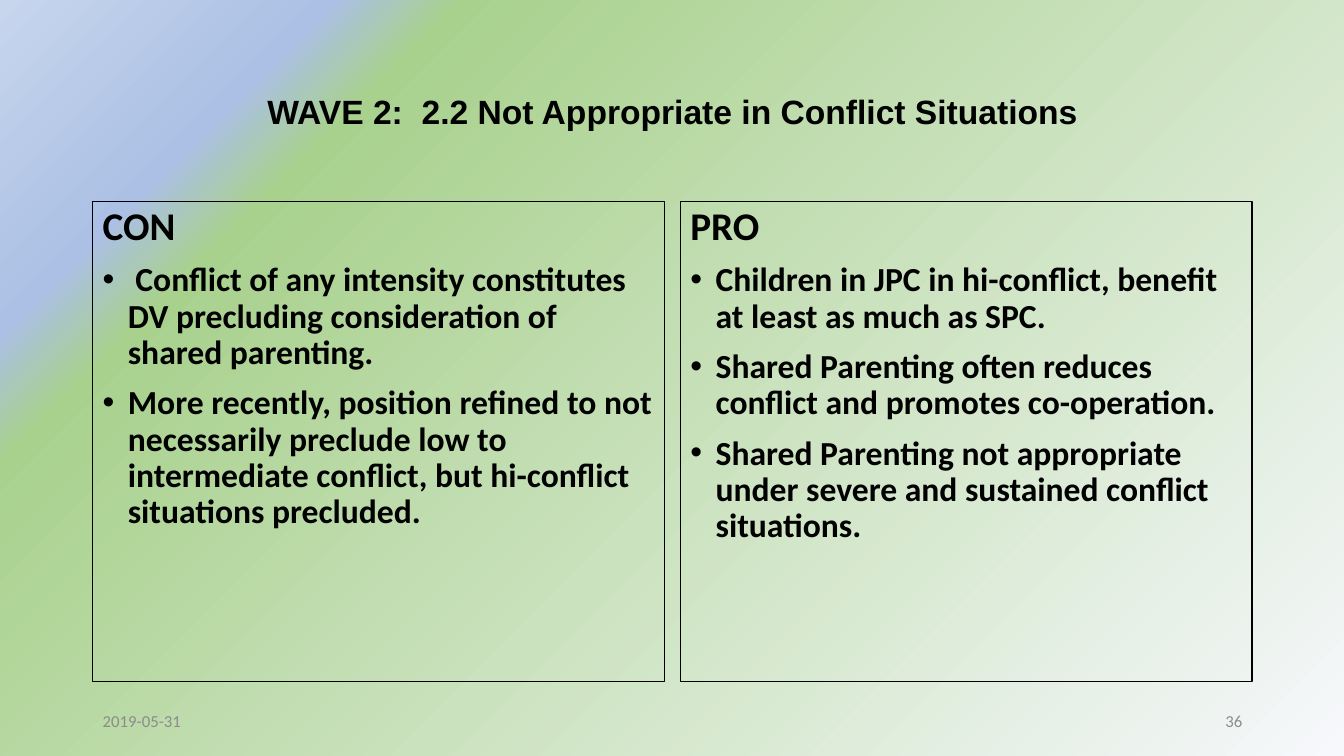
import pptx
import pptx.util
import pptx.dml.color
import pptx.enum.shapes
import pptx.enum.text
import pptx.oxml
import pptx.oxml.ns
import lxml.etree

Inches, Pt = pptx.util.Inches, pptx.util.Pt
RGBColor = pptx.dml.color.RGBColor
ALIGN = pptx.enum.text.PP_ALIGN
ANCHOR = pptx.enum.text.MSO_ANCHOR
qn = pptx.oxml.ns.qn

BLACK = RGBColor(0x00, 0x00, 0x00)
GREY = RGBColor(0x8C, 0x8C, 0x8C)
GRADIENT = [
    (0, RGBColor(0xF6, 0xF8, 0xFC)),
    (78, RGBColor(0xA9, 0xD1, 0x8E)),
    (84, RGBColor(0xAB, 0xC0, 0xE4)),
    (100, RGBColor(0xC7, 0xD5, 0xED)),
]
MARGIN = 0.92


def write(paragraph, text, align=ALIGN.LEFT, **font_format):
    paragraph.alignment = align
    run = paragraph.add_run()
    run.text = text
    run.font.color.rgb = font_format.pop("color")
    for attribute, value in font_format.items():
        setattr(run.font, attribute, value)


def add_line_of_text(slide, left, top, width, height):
    frame = slide.shapes.add_textbox(
        Inches(left), Inches(top), Inches(width), Inches(height)).text_frame
    frame.word_wrap = True
    frame.vertical_anchor = ANCHOR.MIDDLE
    return frame.paragraphs[0]


presentation = pptx.Presentation()
presentation.slide_width = Inches(13.33)
presentation.slide_height = Inches(7.5)
slide = presentation.slides.add_slide(presentation.slide_layouts[6])

# Background: gradient spreading from the bottom right corner
slide.background.fill.gradient()
gradient = slide.element.find(".//" + qn("a:gradFill"))
for child in list(gradient):
    gradient.remove(child)
stops = lxml.etree.SubElement(gradient, qn("a:gsLst"))
for position, color in GRADIENT:
    stop = lxml.etree.SubElement(stops, qn("a:gs"), pos=str(position * 1000))
    lxml.etree.SubElement(stop, qn("a:srgbClr"), val=str(color))
spread = lxml.etree.SubElement(gradient, qn("a:path"), path="circle")
lxml.etree.SubElement(spread, qn("a:fillToRect"), l="100000", t="100000")

# Title
title = add_line_of_text(slide, MARGIN, 0.4, 11.5, 1.45)
title.line_spacing = 0.9
write(title, "WAVE 2:  2.2 Not Appropriate in Conflict Situations", ALIGN.CENTER,
      name="Arial", size=Pt(24), bold=True, color=BLACK)

# Arguments on both sides
arguments = {
    "CON": [
        " Conflict of any intensity constitutes DV precluding consideration of "
        "shared parenting.",
        "More recently, position refined to not necessarily preclude low to "
        "intermediate conflict, but hi-conflict situations precluded.",
    ],
    "PRO": [
        "Children in JPC in hi-conflict, benefit at least as much as SPC.",
        "Shared Parenting often reduces conflict and promotes co-operation.",
        "Shared Parenting not appropriate under severe and sustained conflict "
        "situations.",
    ],
}
for column, (side, points) in enumerate(arguments.items()):
    panel = slide.shapes.add_shape(
        pptx.enum.shapes.MSO_SHAPE.RECTANGLE,
        Inches(MARGIN + column * 5.83), Inches(2), Inches(5.67), Inches(4.76))
    panel.shadow.inherit = False
    panel.fill.background()
    panel.line.color.rgb = BLACK
    panel.line.width = Pt(1)
    frame = panel.text_frame
    frame.word_wrap = True
    frame.vertical_anchor = ANCHOR.TOP
    for index, text in enumerate([side] + points):
        paragraph = frame.add_paragraph() if index else frame.paragraphs[0]
        paragraph.line_spacing = 0.9
        paragraph.space_before = Pt(10)
        write(paragraph, text, name="Calibri", size=Pt(24 if index else 28),
              bold=True, color=BLACK)
        if index:
            properties = paragraph._p.get_or_add_pPr()
            properties.set("marL", str(Inches(0.25)))
            properties.set("indent", str(Inches(-0.25)))
            lxml.etree.SubElement(properties, qn("a:buFont"), typeface="Arial")
            lxml.etree.SubElement(properties, qn("a:buChar"), char="•")

# Footer: date and slide number
for left, text, align in [(MARGIN, "2019-05-31", ALIGN.LEFT),
                          (9.42, "36", ALIGN.RIGHT)]:
    footer = add_line_of_text(slide, left, 6.95, 3, 0.4)
    write(footer, text, align, name="Calibri", size=Pt(12), color=GREY)

presentation.save("out.pptx")
